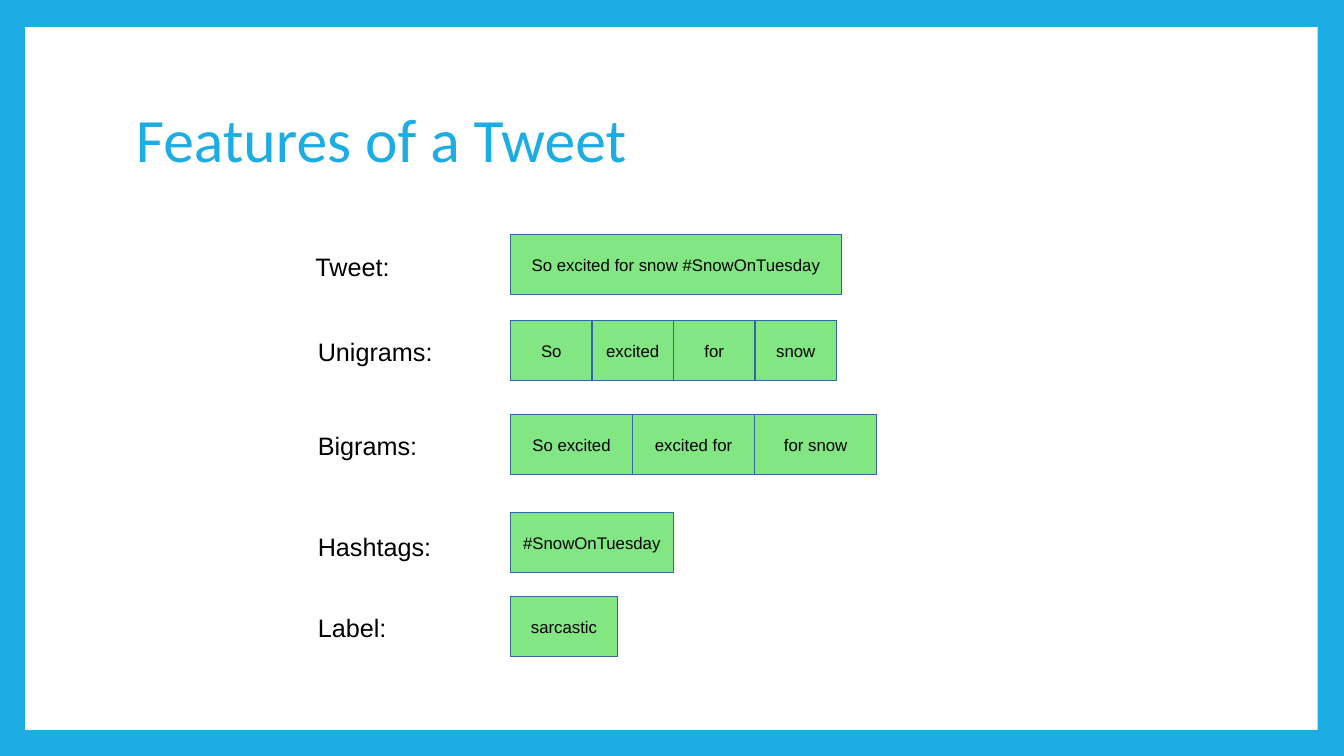
from lxml.etree import SubElement
from pptx import Presentation
from pptx.dml.color import RGBColor
from pptx.enum.shapes import MSO_SHAPE
from pptx.enum.text import MSO_ANCHOR, PP_ALIGN
from pptx.oxml.ns import qn
from pptx.util import Pt

BLUE, WHITE, BLACK = "1CADE4", "FFFFFF", "000000"
GREEN, OUTLINE = "00CC00", "3465A4"


def color(hex_code):
    return RGBColor.from_string(hex_code)


class Page:
    """Holds the text styles and the current slide."""

    styles = {
        "title": {"name": "Calibri", "size": Pt(44), "ink": BLUE,
                  "para": {"line_spacing": 0.9}, "anchor": MSO_ANCHOR.MIDDLE},
        "label": {"name": "Arial", "size": Pt(18), "ink": BLACK,
                  "para": {}, "anchor": MSO_ANCHOR.TOP},
        "token": {"name": "Arial", "size": Pt(12), "ink": BLACK,
                  "para": {"alignment": PP_ALIGN.CENTER}, "anchor": MSO_ANCHOR.MIDDLE},
    }

    def __init__(self, deck, background):
        self.slide = deck.slides.add_slide(deck.slide_layouts[6])
        fill = self.slide.background.fill
        fill.solid()
        fill.fore_color.rgb = color(background)

    def fill_text(self, box, words, style_name):
        style = self.styles[style_name]
        frame = box.text_frame
        frame.word_wrap = True
        frame.vertical_anchor = style["anchor"]
        para = frame.paragraphs[0]
        for key, value in style["para"].items():
            setattr(para, key, value)
        span = para.add_run()
        span.text = words
        for key in ("name", "size"):
            setattr(span.font, key, style[key])
        span.font.color.rgb = color(style["ink"])

    def text(self, left, top, width, height, words, style_name):
        box = self.slide.shapes.add_textbox(Pt(left), Pt(top), Pt(width), Pt(height))
        self.fill_text(box, words, style_name)

    def rectangle(self, left, top, width, height, fill, alpha=100, line=None):
        box = self.slide.shapes.add_shape(
            MSO_SHAPE.RECTANGLE, Pt(left), Pt(top), Pt(width), Pt(height))
        box.shadow.inherit = False
        box.fill.solid()
        box.fill.fore_color.rgb = color(fill)
        if alpha < 100:
            tint = box.element.spPr.find(qn("a:solidFill"))[0]
            SubElement(tint, qn("a:alpha")).set("val", str(alpha * 1000))
        if line:
            box.line.color.rgb = color(line)
            box.line.width = Pt(0.75)
        else:
            box.line.fill.background()
        return box

    def tokens(self, left, top, width, height, words):
        """Draws a row of touching boxes, one for each token."""
        for index, word in enumerate(words):
            box = self.rectangle(left + index * width, top, width, height,
                                 GREEN, 49, OUTLINE)
            self.fill_text(box, word, "token")


def main():
    deck = Presentation()
    deck.slide_width, deck.slide_height = Pt(960), Pt(540)

    # Frame and title
    page = Page(deck, BLUE)
    page.rectangle(18, 19.3, 923.3, 502, WHITE)
    page.text(90, 48.2, 777.6, 106.6, "Features of a Tweet", "title")

    # Feature rows: label, label left, label top, box top, box width, tokens
    rows = [
        ("Tweet:", 218.2, 175.7, 167.6, 236.4, ["So excited for snow #SnowOnTuesday"]),
        ("Unigrams:", 219.9, 236.9, 229, 58.2, ["So", "excited", "for", "snow"]),
        ("Bigrams:", 219.9, 303.8, 296, 87.2, ["So excited", "excited for", "for snow"]),
        ("Hashtags:", 219.9, 375.8, 366, 116.2, ["#SnowOnTuesday"]),
        ("Label:", 219.9, 433.6, 426, 76.4, ["sarcastic"]),
    ]
    for label, label_left, label_top, box_top, box_width, words in rows:
        page.text(label_left, label_top, 100, 27.4, label, "label")
        page.tokens(364.7, box_top, box_width, 43, words)

    deck.save("out.pptx")


if __name__ == "__main__":
    main()
